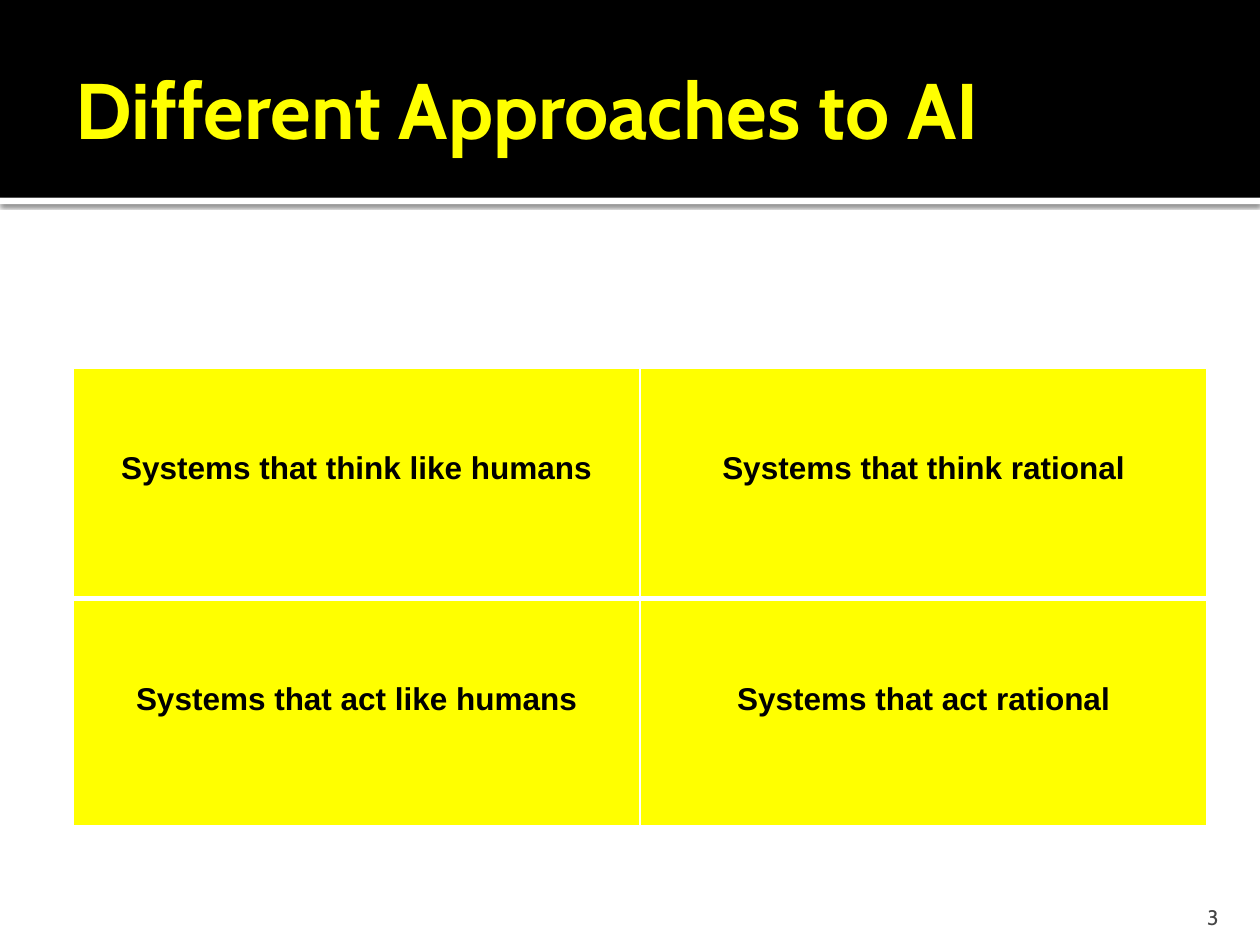
from dataclasses import dataclass

from lxml.etree import SubElement
from pptx import Presentation
from pptx.dml.color import RGBColor
from pptx.enum.shapes import MSO_SHAPE
from pptx.enum.text import MSO_ANCHOR, PP_ALIGN
from pptx.oxml.ns import qn
from pptx.util import Inches, Pt

WIDTH, HEIGHT = 10, 7.5
BAND_HEIGHT = 1.57
COLORS = {"band": "000000", "accent": "FFFF00", "paper": "FFFFFF",
          "text": "000000", "number": "454545"}
APPROACHES = [
    ["Systems that think like humans", "Systems that think rational"],
    ["Systems that act like humans", "Systems that act rational"],
]
ROW_HEIGHTS = [1.83, 1.8]
COLUMN_WIDTH = 4.5


@dataclass(frozen=True)
class Bar:
    top: float
    height: float
    color: str
    shadowed: bool = False


BARS = [Bar(BAND_HEIGHT, 0.05, "paper", shadowed=True),
        Bar(0, BAND_HEIGHT, "band")]


def rgb(name: str) -> RGBColor:
    return RGBColor.from_string(COLORS[name])


def style(para, font: str, size: float, color: str, align, bold: bool = False) -> None:
    para.alignment = align
    para.font.name = font
    para.font.size = Pt(size)
    para.font.bold = bold
    para.font.color.rgb = rgb(color)


def set_margins(frame, left: float, top: float, right: float, bottom: float) -> None:
    frame.margin_left, frame.margin_top = Inches(left), Inches(top)
    frame.margin_right, frame.margin_bottom = Inches(right), Inches(bottom)


def add_shadow(shape) -> None:
    effects = shape.element.spPr.find(qn("a:effectLst"))
    shadow = SubElement(effects, qn("a:outerShdw"), blurRad=str(Pt(2.5)),
                        dist=str(Pt(0.8)), dir="5400000", rotWithShape="0")
    color = SubElement(shadow, qn("a:srgbClr"), val="000000")
    SubElement(color, qn("a:alpha"), val="60000")


def draw_bar(slide, bar: Bar) -> None:
    shape = slide.shapes.add_shape(MSO_SHAPE.RECTANGLE, 0, Inches(bar.top),
                                   Inches(WIDTH), Inches(bar.height))
    shape.fill.solid()
    shape.fill.fore_color.rgb = rgb(bar.color)
    shape.line.fill.background()
    shape.shadow.inherit = False
    if bar.shadowed:
        add_shadow(shape)


def draw_title(slide, text: str) -> None:
    title = slide.shapes.title
    # Bring the title in front of the band
    title.element.getparent().append(title.element)
    title.left, title.top = Inches(0.5), Inches(0.17)
    title.width, title.height = Inches(9), Inches(1.37)
    frame = title.text_frame
    frame.text = text
    frame.word_wrap = True
    frame.vertical_anchor = MSO_ANCHOR.MIDDLE
    set_margins(frame, 0.1, 0.05, 0.05, 0.05)
    style(frame.paragraphs[0], "Cabin", 45, "accent", PP_ALIGN.LEFT, bold=True)


def set_borders(cell, widths: dict[str, float]) -> None:
    properties = cell._tc.get_or_add_tcPr()
    for side, width in widths.items():
        line = SubElement(properties, qn(f"a:ln{side}"), w=str(Pt(width)))
        fill = SubElement(line, qn("a:solidFill"))
        SubElement(fill, qn("a:srgbClr"), val=COLORS["paper"])


def draw_approaches(slide) -> None:
    rows, columns = len(APPROACHES), len(APPROACHES[0])
    table = slide.shapes.add_table(
        rows, columns, Inches(0.58), Inches(2.92),
        Inches(columns * COLUMN_WIDTH), Inches(sum(ROW_HEIGHTS))).table
    table.first_row = table.horz_banding = False
    for row, height in enumerate(ROW_HEIGHTS):
        table.rows[row].height = Inches(height)
        for column, text in enumerate(APPROACHES[row]):
            cell = table.cell(row, column)
            cell.text = text
            set_margins(cell, 0.1, 0.66, 0.1, 0.05)
            style(cell.text_frame.paragraphs[0], "Arial", 18, "text",
                  PP_ALIGN.CENTER, bold=True)
            set_borders(cell, {"L": 1, "R": 1, "T": 3 if row > 0 else 1,
                               "B": 3 if row < rows - 1 else 1})
            cell.fill.solid()
            cell.fill.fore_color.rgb = rgb("accent")


def draw_page_number(slide, number: int) -> None:
    box = slide.shapes.add_textbox(Inches(8.97), Inches(7.08), Inches(0.8), Inches(0.3))
    frame = box.text_frame
    frame.text = str(number)
    frame.word_wrap = True
    frame.vertical_anchor = MSO_ANCHOR.BOTTOM
    set_margins(frame, 0.1, 0.05, 0.1, 0)
    style(frame.paragraphs[0], "Cabin", 12, "number", PP_ALIGN.RIGHT)


def main() -> None:
    deck = Presentation()
    deck.slide_width, deck.slide_height = Inches(WIDTH), Inches(HEIGHT)
    slide = deck.slides.add_slide(deck.slide_layouts.get_by_name("Title Only"))
    for bar in BARS:
        draw_bar(slide, bar)
    draw_title(slide, "Different Approaches to AI")
    draw_approaches(slide)
    draw_page_number(slide, 3)
    deck.save("out.pptx")


if __name__ == "__main__":
    main()
